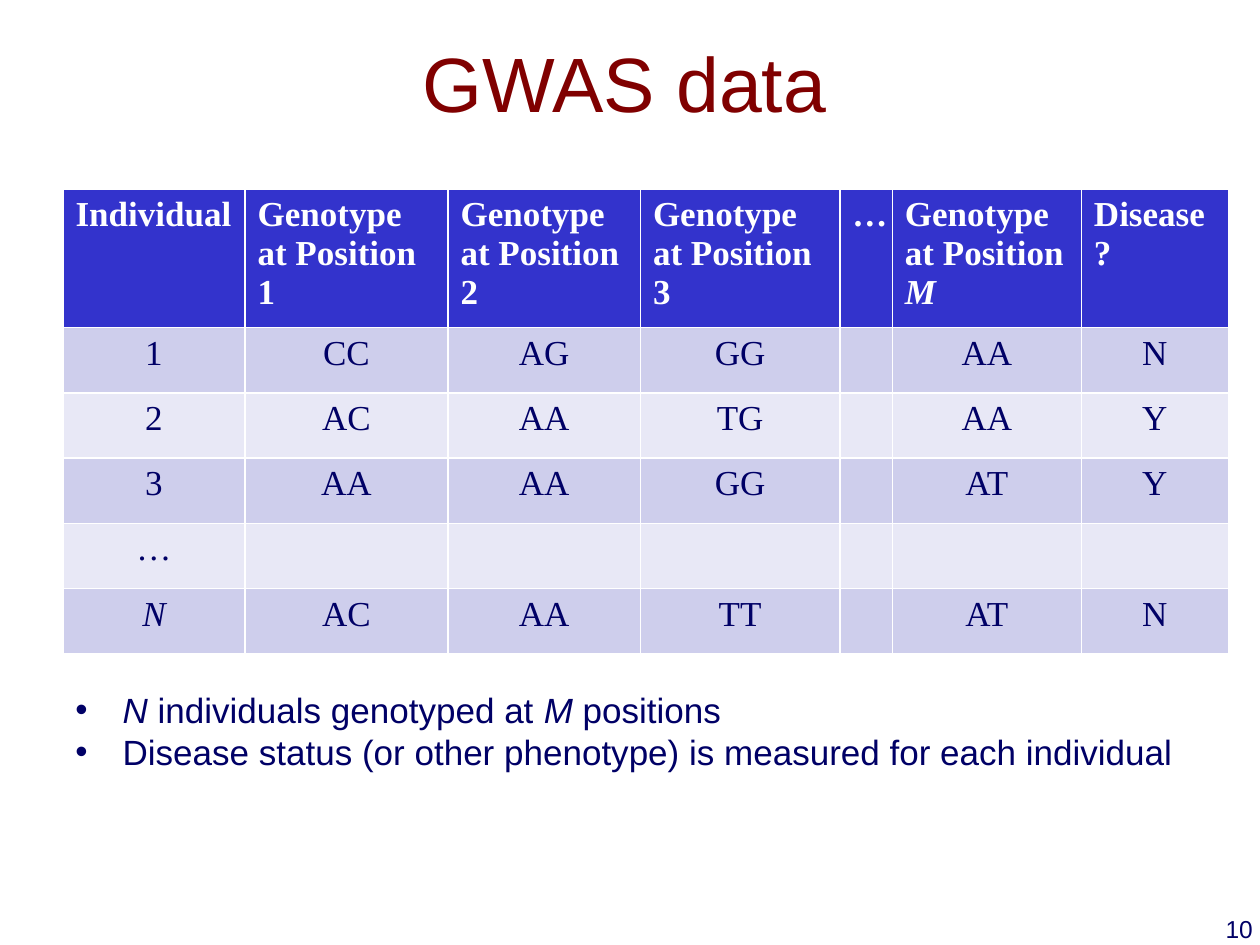
import pptx
import pptx.dml.color
import pptx.enum.text
import pptx.oxml
import pptx.oxml.ns
import pptx.util

Pt = pptx.util.Pt
ALIGN = pptx.enum.text.PP_ALIGN
ANCHOR = pptx.enum.text.MSO_ANCHOR

HEAD = ["Individual", "Genotype at Position 1", "Genotype at Position 2",
        "Genotype at Position 3", "…", "Genotype at Position *M*", "Disease?"]
BODY = [
    ["1", "CC", "AG", "GG", "", "AA", "N"],
    ["2", "AC", "AA", "TG", "", "AA", "Y"],
    ["3", "AA", "AA", "GG", "", "AT", "Y"],
    ["…", "", "", "", "", "", ""],
    ["*N*", "AC", "AA", "TT", "", "AT", "N"],
]
WIDTHS = [104, 116, 110, 114, 30, 108, 84]
HEIGHTS = [54] + [37.3] * len(BODY)
POINTS = [
    "*N* individuals genotyped at *M* positions",
    "Disease status (or other phenotype) is measured for each individual",
]


def color(code):
    return pptx.dml.color.RGBColor.from_string(code)


def write(para, text, font="Arial", size=20, ink="000066", bold=False,
          align=ALIGN.LEFT):
    """Fill a paragraph; parts between asterisks become italic."""
    para.alignment = align
    for i, part in enumerate(text.split("*")):
        if part:
            run = para.add_run()
            run.text = part
            run.font.name = font
            run.font.size = Pt(size)
            run.font.bold = bold
            run.font.italic = i % 2 == 1
            run.font.color.rgb = color(ink)


class Deck:
    serif = "Times New Roman"
    dark = "3333CC"
    bands = ["CECEEC", "E8E8F6"]

    def __init__(self):
        self.show = pptx.Presentation()
        self.show.slide_width = Pt(720)
        self.show.slide_height = Pt(540)
        self.slide = self.show.slides.add_slide(self.show.slide_layouts[6])

    def text(self, box, lines, anchor=ANCHOR.TOP, bullet=False, **style):
        shape = self.slide.shapes.add_textbox(*map(Pt, box))
        frame = shape.text_frame
        frame.word_wrap = True
        frame.vertical_anchor = anchor
        for i, line in enumerate(lines):
            para = frame.add_paragraph() if i else frame.paragraphs[0]
            write(para, line, **style)
            if bullet:
                self.bullet(para)

    def bullet(self, para):
        props = para._p.get_or_add_pPr()
        props.set("marL", str(Pt(27)))
        props.set("indent", str(Pt(-27)))
        for tag in ('buFont typeface="Arial"', 'buChar char="•"'):
            props.append(pptx.oxml.parse_xml(
                f'<a:{tag} {pptx.oxml.ns.nsdecls("a")}/>'))

    def table(self, left, top, widths, heights, rows):
        """Add a table; its default style draws the white rules."""
        frame = self.slide.shapes.add_table(
            len(rows), len(widths), Pt(left), Pt(top),
            Pt(sum(widths)), Pt(sum(heights)))
        grid = frame.table
        for col, width in zip(grid.columns, widths):
            col.width = Pt(width)
        for row, height in zip(grid.rows, heights):
            row.height = Pt(height)
        for r, row in enumerate(rows):
            for c, text in enumerate(row):
                self.cell(grid.cell(r, c), text, r)

    def cell(self, cell, text, row):
        head = row == 0
        if head:
            cell.margin_right = Pt(6)
        cell.fill.solid()
        cell.fill.fore_color.rgb = color(
            self.dark if head else self.bands[(row - 1) % 2])
        write(cell.text_frame.paragraphs[0], text, font=self.serif, bold=head,
              ink="FFFFFF" if head else "000066",
              align=ALIGN.LEFT if head else ALIGN.CENTER)


def main():
    deck = Deck()
    deck.text((51, 1.5, 612, 90), ["GWAS data"], anchor=ANCHOR.MIDDLE,
              size=44, ink="800000", align=ALIGN.CENTER)
    deck.table(36, 108, WIDTHS, HEIGHTS, [HEAD] + BODY)
    deck.text((36, 390, 642, 55.5), POINTS, bullet=True)
    deck.text((573, 519, 150, 36), ["10"], size=14, align=ALIGN.RIGHT)
    deck.show.save("out.pptx")


if __name__ == "__main__":
    main()
